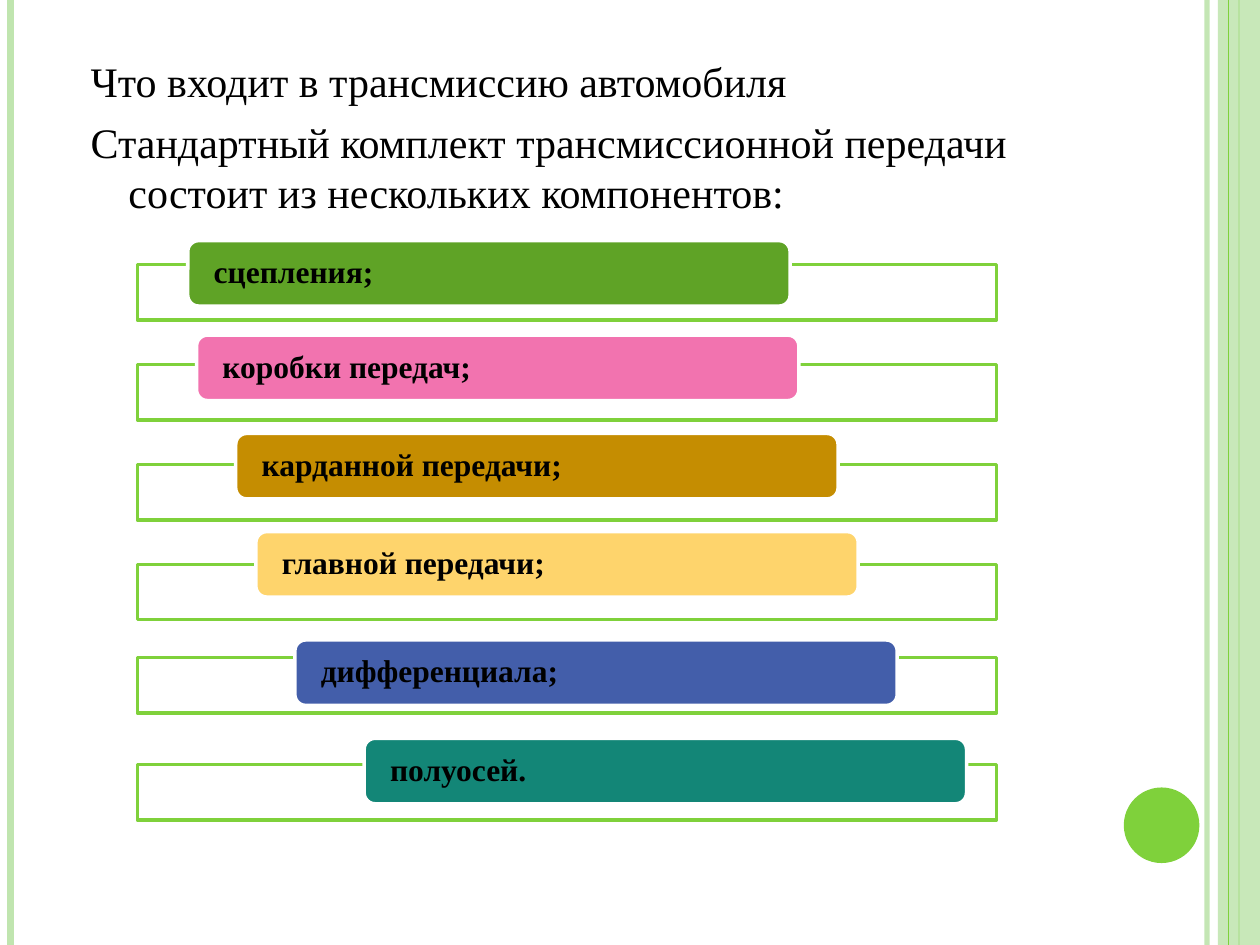
from lxml import etree
from pptx import Presentation
from pptx.dml.color import RGBColor
from pptx.enum.shapes import MSO_CONNECTOR, MSO_SHAPE
from pptx.enum.text import MSO_ANCHOR, MSO_AUTO_SIZE, PP_ALIGN
from pptx.oxml.ns import qn
from pptx.util import Pt

STRAIGHT = MSO_CONNECTOR.STRAIGHT
RECTANGLE, ROUNDED, OVAL = MSO_SHAPE.RECTANGLE, MSO_SHAPE.ROUNDED_RECTANGLE, MSO_SHAPE.OVAL
TOP, MIDDLE = MSO_ANCHOR.TOP, MSO_ANCHOR.MIDDLE
NO_AUTOFIT, LEFT = MSO_AUTO_SIZE.NONE, PP_ALIGN.LEFT

PAGE_WIDTH, PAGE_HEIGHT = 720, 540
TITLE_AND_CONTENT = 1
FONT = "Times New Roman"
GREEN, PALE_GREEN, BLACK, WHITE = "7FD13B", "C0E5AF", "000000", "FFFFFF"

INTRO = [
    "Что входит в трансмиссию автомобиля",
    "Стандартный комплект трансмиссионной передачи состоит из нескольких компонентов:",
]
# Label, colour, left and top of the label, top of its rail (within the list box)
COMPONENTS = [
    ("сцепления;", "5FA326", 28.8, 0, 13.7),
    ("коробки передач;", "F273AF", 33.8, 54, 70.8),
    ("карданной передачи;", "C58D01", 56.2, 110.2, 128),
    ("главной передачи;", "FED46C", 67.7, 166.3, 185),
    ("дифференциала;", "435EAA", 90, 228.2, 238.3),
    ("полуосей.", "138677", 129.6, 284.4, 299.5),
]
LABEL_WIDTH, LABEL_HEIGHT, RAIL_HEIGHT = 344.2, 37.4, 31.7


def paint(color_format, color, opacity=None):
    color_format.rgb = RGBColor.from_string(color)
    return opacity


def set_opacity(shape, percent):
    color = next(shape._element.spPr.iter(qn("a:srgbClr")))
    etree.SubElement(color, qn("a:alpha")).set("val", str(percent * 1000))


def format_text(para, size, bold=False):
    for span in para.runs:
        span.font.name, span.font.size, span.font.bold = FONT, Pt(size), bold
        paint(span.font.color, BLACK)


def add_box(page, kind, box, fill, line=None):
    shape = page.shapes.add_shape(kind, *map(Pt, box))
    shape.shadow.inherit = False
    shape.fill.solid()
    paint(shape.fill.fore_color, fill)
    if line:
        paint(shape.line.color, line)
        shape.line.width = Pt(2)
    else:
        shape.line.fill.background()
    return shape


def add_stripe(page, x, box, color, width):
    top, height = box[1], box[3]
    stripe = page.shapes.add_connector(STRAIGHT, Pt(x), Pt(top), Pt(x), Pt(top + height))
    paint(stripe.line.color, color)
    stripe.line.width = Pt(width)
    etree.SubElement(stripe._element.spPr, qn("a:effectLst"))
    return stripe


def add_frame(page, box):
    left, top, width, height = box
    right = left + width
    set_opacity(add_stripe(page, right - 30.2, box, PALE_GREEN, 3), 93)
    add_stripe(page, left + 6, box, PALE_GREEN, 4.5)
    add_stripe(page, right - 12, box, GREEN, 1.5)
    set_opacity(add_box(page, RECTANGLE, (right - 24, top, 24, height), PALE_GREEN), 87)
    add_stripe(page, right - 18, box, GREEN, 0.75)
    add_box(page, OVAL, (right - 77.8, top + 450, 43.2, 43.2), GREEN)


def add_intro(body, box):
    body.left, body.top, body.width, body.height = map(Pt, box)
    frame = body.text_frame
    frame.text = "\n".join(INTRO)
    frame.auto_size, frame.vertical_anchor = NO_AUTOFIT, TOP
    for para in frame.paragraphs:
        para.space_before = Pt(6)
        # Hanging indent without a bullet
        properties = para._p.get_or_add_pPr()
        properties.set("marL", str(Pt(21.6)))
        properties.set("indent", str(Pt(-21.6)))
        etree.SubElement(properties, qn("a:buNone"))
        format_text(para, 24)


def add_components(page, box):
    left, top, width, _ = box
    for text, color, label_left, label_top, rail_top in COMPONENTS:
        # Rail behind the label
        add_box(page, RECTANGLE, (left, top + rail_top, width, RAIL_HEIGHT), WHITE, GREEN)
        # Coloured label
        label_box = (left + label_left, top + label_top, LABEL_WIDTH, LABEL_HEIGHT)
        label = add_box(page, ROUNDED, label_box, color, WHITE)
        frame = label.text_frame
        frame.text = text
        frame.word_wrap, frame.vertical_anchor = True, MIDDLE
        frame.margin_left = frame.margin_right = Pt(13)
        frame.margin_top = frame.margin_bottom = 0
        para = frame.paragraphs[0]
        para.alignment, para.line_spacing = LEFT, 0.9
        format_text(para, 18, bold=True)


def main():
    deck = Presentation()
    deck.slide_width, deck.slide_height = Pt(PAGE_WIDTH), Pt(PAGE_HEIGHT)
    page = deck.slides.add_slide(deck.slide_layouts[TITLE_AND_CONTENT])
    title = page.shapes.title._element
    title.getparent().remove(title)

    add_frame(page, (0, 0, PAGE_WIDTH, PAGE_HEIGHT))
    add_intro(page.placeholders[1], (44.6, 28, 588.2, 101.5))
    add_components(page, (78.5, 137.5, 491, 331.2))
    deck.save("out.pptx")


if __name__ == "__main__":
    main()
